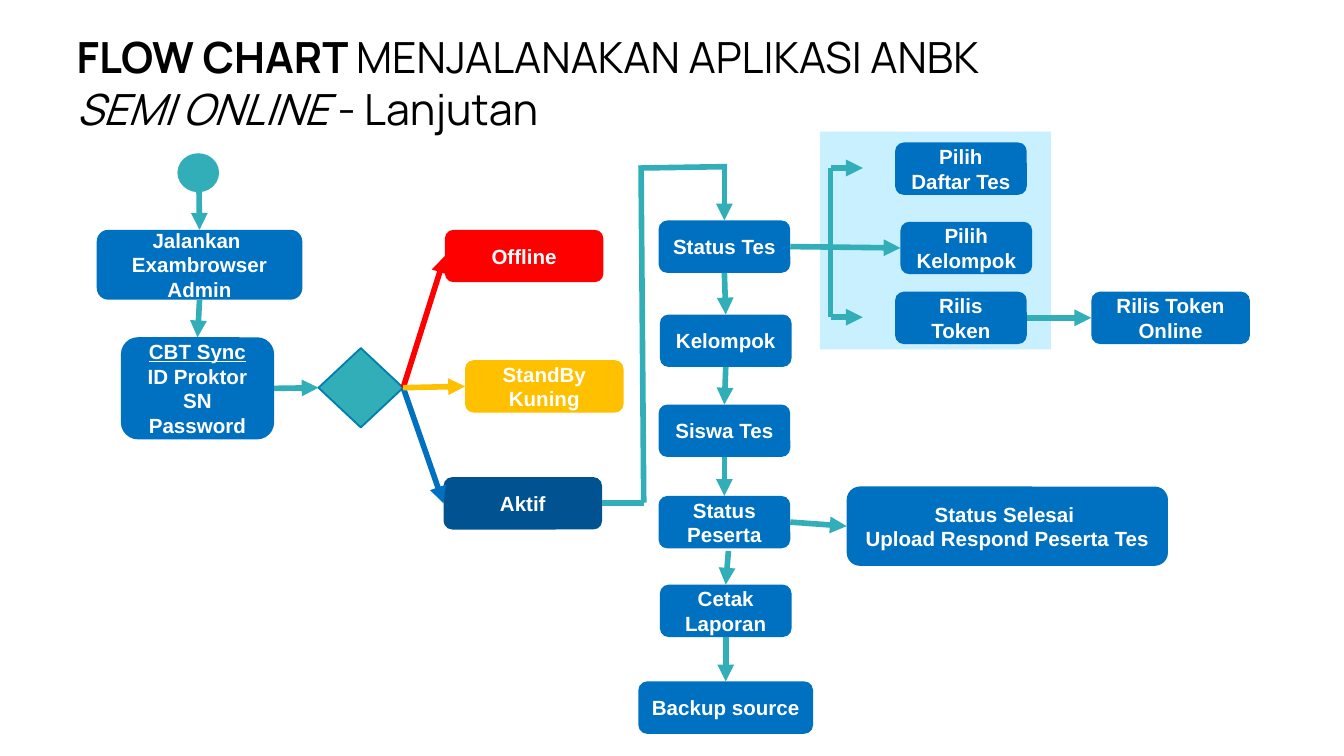
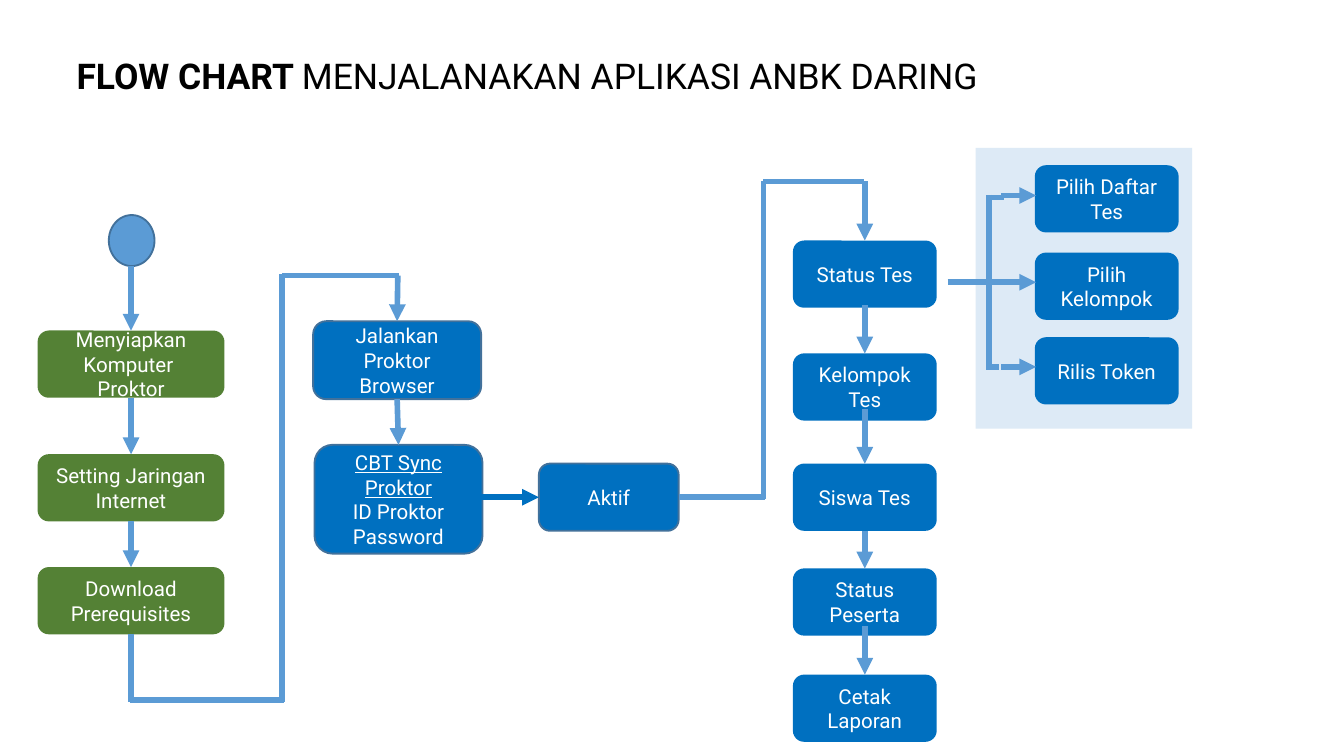
from dataclasses import dataclass

from lxml.etree import SubElement
from pptx import Presentation
from pptx.dml.color import RGBColor
from pptx.enum.shapes import MSO_CONNECTOR, MSO_SHAPE
from pptx.enum.text import MSO_ANCHOR, MSO_AUTO_SIZE, PP_ALIGN
from pptx.oxml.ns import qn
from pptx.util import Inches, Pt


@dataclass(frozen=True)
class Theme:
    black: str = "000000"
    white: str = "FFFFFF"
    blue: str = "0070C0"
    navy: str = "005390"
    red: str = "FF0000"
    amber: str = "FFC000"
    green: str = "548135"
    teal: str = "32AEB8"
    sky: str = "5B9BD5"
    teal_panel: str = "C9F0FE"
    sky_panel: str = "DDEAF6"
    diamond_outline: str = "0080AF"
    sky_outline: str = "42719B"
    semi_online_title: int = 23
    daring_title: int = 19
    label: int = 11
    arrow: int = 3
    outline: int = 1


theme = Theme()
presentation = Presentation()
presentation.slide_width = Inches(10)
presentation.slide_height = presentation.slide_width * 9 // 16

# The slide is a grid of 100 columns by 56.25 rows; all places are in grid units.
COLUMN = presentation.slide_width / 100
ROW = presentation.slide_height / 56.25
TOP, LEFT, BOTTOM, RIGHT = range(4)
TITLE_FRAME = {"word_wrap": True, "auto_size": MSO_AUTO_SIZE.SHAPE_TO_FIT_TEXT,
               "margin_left": 0, "margin_right": 0, "margin_top": 0, "margin_bottom": 0}
LABEL_FRAME = {"word_wrap": True, "vertical_anchor": MSO_ANCHOR.MIDDLE,
               "margin_left": Inches(0.07), "margin_right": Inches(0.07),
               "margin_top": Inches(0.04), "margin_bottom": Inches(0.04)}


def add_node(slide, place, fill, text="", font=None, outline=None,
             kind=MSO_SHAPE.ROUNDED_RECTANGLE):
    """Draw a shape; in text, \\n parts paragraphs and \\v parts lines."""
    left, top, width, height = place
    shape = slide.shapes.add_shape(kind, round(left * COLUMN), round(top * ROW),
                                   round(width * COLUMN), round(height * ROW))
    shape.shadow.inherit = False
    shape.fill.solid()
    shape.fill.fore_color.rgb = RGBColor.from_string(fill)
    if outline:
        shape.line.color.rgb = RGBColor.from_string(outline)
        shape.line.width = Pt(theme.outline)
    else:
        shape.line.fill.background()
    if not text:
        return shape
    frame = shape.text_frame
    for name, value in LABEL_FRAME.items():
        setattr(frame, name, value)
    for number, words in enumerate(text.split("\n")):
        paragraph = frame.add_paragraph() if number else frame.paragraphs[0]
        paragraph.alignment = PP_ALIGN.CENTER
        for position, line in enumerate(words.split("\v")):
            if position:
                paragraph.add_line_break()
            run = paragraph.add_run()
            run.text = line
            run.font.underline = line.startswith("CBT Sync")
            run.font.size = Pt(theme.label)
            run.font.color.rgb = RGBColor.from_string(theme.white)
            for name, value in font.items():
                setattr(run.font, name, value)
    return shape


def add_link(slide, start, end, color, arrow=True):
    """Draw a line; each end is a grid point or a (shape, side) pair."""
    points = [(0, 0) if hasattr(finish[0], "shape_id")
              else (round(finish[0] * COLUMN), round(finish[1] * ROW))
              for finish in (start, end)]
    connector = slide.shapes.add_connector(MSO_CONNECTOR.STRAIGHT, *points[0], *points[1])
    for finish, connect in ((start, connector.begin_connect), (end, connector.end_connect)):
        if hasattr(finish[0], "shape_id"):
            connect(*finish)
    connector.line.color.rgb = RGBColor.from_string(color)
    connector.line.width = Pt(theme.arrow)
    if arrow:
        SubElement(connector.line._get_or_add_ln(), qn("a:tailEnd"), type="triangle")
    SubElement(connector._element.spPr, qn("a:effectLst"))


# Slides and titles
titles = [
    ((5.7, 2.3, 74.1, 7.7), "Manrope", theme.semi_online_title,
     [("FLOW CHART ", {"bold": True}), ("MENJALANAKAN APLIKASI ANBK ", {}),
      ("SEMI ONLINE ", {"italic": True}), ("- Lanjutan", {})]),
    ((5.7, 4, 70.4, 3.2), "Roboto", theme.daring_title,
     [("FLOW CHART ", {"bold": True}), ("MENJALANAKAN APLIKASI ANBK DARING", {})]),
]
for (left, top, width, height), typeface, size, parts in titles:
    slide = presentation.slides.add_slide(presentation.slide_layouts[6])
    title = slide.shapes.add_textbox(round(left * COLUMN), round(top * ROW),
                                     round(width * COLUMN), round(height * ROW))
    for name, value in TITLE_FRAME.items():
        setattr(title.text_frame, name, value)
    paragraph = title.text_frame.paragraphs[0]
    for words, emphasis in parts:
        run = paragraph.add_run()
        run.text = words
        run.font.color.rgb = RGBColor.from_string(theme.black)
        for name, value in {"name": typeface, "size": Pt(size), **emphasis}.items():
            setattr(run.font, name, value)
semi_online, daring = presentation.slides

# Semi online: shapes
font = {"name": "Arial", "bold": True}
add_node(semi_online, (61, 9.8, 17.2, 16.2), theme.teal_panel, kind=MSO_SHAPE.RECTANGLE)
add_node(semi_online, (13.2, 11.4, 3.1, 2.9), theme.teal, kind=MSO_SHAPE.OVAL)
decision = add_node(semi_online, (23.7, 25.9, 6.3, 5.9), theme.teal,
                    outline=theme.diamond_outline, kind=MSO_SHAPE.DIAMOND)
nodes = {}
for text, place, fill in [
    ("Jalankan \nExambrowser Admin", (7.2, 17.1, 15.3, 5.2), theme.blue),
    ("CBT Sync\vID Proktor\vSN\vPassword", (9, 25.1, 11.4, 7.6), theme.blue),
    ("Offline", (33.1, 17.1, 11.8, 3.9), theme.red),
    ("StandBy Kuning", (34.6, 26.8, 11.8, 3.9), theme.amber),
    ("Aktif", (33, 35.5, 11.8, 3.9), theme.navy),
    ("Status Tes", (49, 16.4, 9.8, 3.9), theme.blue),
    ("Kelompok", (49.1, 23.4, 9.8, 3.9), theme.blue),
    ("Siswa Tes", (49, 30.1, 9.8, 3.9), theme.blue),
    ("Status Peserta", (49, 36.9, 9.8, 3.9), theme.blue),
    ("Cetak Laporan", (49.1, 43.5, 9.8, 3.9), theme.blue),
    ("Backup source", (47.5, 50.7, 13, 3.9), theme.blue),
    ("Status Selesai \nUpload Respond Peserta Tes", (63, 36.2, 23.9, 5.9), theme.blue),
    ("Pilih Daftar Tes", (66.6, 10.6, 9.8, 3.9), theme.blue),
    ("Pilih Kelompok", (67, 16.5, 9.8, 3.9), theme.blue),
    ("Rilis Token", (66.6, 21.7, 9.8, 3.9), theme.blue),
    ("Rilis Token Online", (81.2, 21.7, 11.8, 3.9), theme.blue),
]:
    nodes[text.splitlines()[0].strip()] = add_node(semi_online, place, fill, text, font)

# Semi online: arrows between shapes
add_link(semi_online, (14.8, 13.5), (nodes["Jalankan"], TOP), theme.teal)
for upper, lower in [("Jalankan", "CBT Sync"), ("Status Tes", "Kelompok"),
                     ("Kelompok", "Siswa Tes"), ("Siswa Tes", "Status Peserta"),
                     ("Cetak Laporan", "Backup source")]:
    add_link(semi_online, (nodes[upper], BOTTOM), (nodes[lower], TOP), theme.teal)
add_link(semi_online, (54.2, 41), (nodes["Cetak Laporan"], TOP), theme.teal)
add_link(semi_online, (nodes["CBT Sync"], RIGHT), (decision, LEFT), theme.teal)
for outcome, color in [("Offline", theme.red), ("Aktif", theme.blue),
                       ("StandBy Kuning", theme.amber)]:
    add_link(semi_online, (decision, RIGHT), (nodes[outcome], LEFT), color)
for before, after in [("Status Peserta", "Status Selesai"), ("Status Tes", "Pilih Kelompok"),
                      ("Rilis Token", "Rilis Token Online")]:
    add_link(semi_online, (nodes[before], RIGHT), (nodes[after], LEFT), theme.teal)

# Semi online: path from Aktif up to Status Tes, and the branch bracket
add_link(semi_online, (nodes["Aktif"], RIGHT), (47.9, 37.45), theme.teal, arrow=False)
for start, end in [((47.9, 37.4), (47.7, 12.3)), ((47.7, 12.5), (54.1, 12.4)),
                   ((61.8, 12.5), (61.8, 23.6))]:
    add_link(semi_online, start, end, theme.teal, arrow=False)
add_link(semi_online, (53.9, 12.5), (nodes["Status Tes"], TOP), theme.teal)
for row in (12.5, 23.6):
    add_link(semi_online, (61.8, row), (64.2, row), theme.teal)

# Daring: shapes
font = {"name": "Roboto"}
add_node(daring, (8.1, 16, 3.4, 3.8), theme.sky, outline=theme.sky_outline, kind=MSO_SHAPE.OVAL)
add_node(daring, (72.6, 11, 16.1, 20.9), theme.sky_panel, kind=MSO_SHAPE.RECTANGLE)
stacks = []
for left, width, fill, steps in [
    (2.8, 13.9, theme.green, [("Menyiapkan Komputer \nProktor", 24.6),
                              ("Setting Jaringan Internet", 33.8),
                              ("Download Prerequisites", 42.2)]),
    (59, 10.7, theme.blue, [("Status Tes", 17.9), ("Kelompok Tes", 26.3), ("Siswa Tes", 34.5),
                            ("Status Peserta", 42.3), ("Cetak Laporan", 50.2)]),
    (77, 10.7, theme.blue, [("Pilih Daftar Tes", 12.3), ("Pilih Kelompok", 18.8),
                            ("Rilis Token", 25.1)]),
]:
    stacks.append([add_node(daring, (left, top, width, 5), fill, text, font)
                   for text, top in steps])
preparation, status, choices = stacks
browser, sync, active = [
    add_node(daring, place, theme.blue, text, font, theme.sky_outline) for text, place in [
        ("Jalankan Proktor Browser", (23.3, 23.9, 12.5, 5.8)),
        ("CBT Sync Proktor\vID Proktor\vPassword", (23.4, 33.1, 12.5, 8.1)),
        ("Aktif", (40.1, 34.5, 10.4, 5)),
    ]]

# Daring: arrows between shapes
add_link(daring, (9.75, 19.8), (preparation[0], TOP), theme.sky)
for upper, lower in [*zip(preparation, preparation[1:]), (browser, sync), (status[2], status[3])]:
    add_link(daring, (upper, BOTTOM), (lower, TOP), theme.sky)
for row, step in [(13.5, 0), (22.7, 1), (30.4, 2), (46.6, 4)]:
    add_link(daring, (64.35, row), (status[step], TOP), theme.sky)
add_link(daring, (35.8, 37), (active, LEFT), theme.blue)
for column, row in [(74.5, 14.55), (70.5, 21), (74.5, 27.3)]:
    add_link(daring, (column, row), (77.1, row), theme.sky)
add_link(daring, (29.6, 20.5), (browser, TOP), theme.sky)

# Daring: path to the browser, path to Status Tes, and the branch bracket
add_link(daring, (preparation[-1], BOTTOM), (9.75, 52.2), theme.sky, arrow=False)
add_link(daring, (active, RIGHT), (56.9, 37), theme.sky, arrow=False)
for start, end in [
    ((9.7, 52.1), (21.1, 52.1)), ((21, 52.2), (21, 20.4)), ((21, 20.5), (29.7, 20.5)),
    ((56.8, 37.1), (56.8, 13.5)), ((56.8, 13.5), (64.3, 13.5)),
    ((73.6, 14.5), (73.6, 27.3)), ((73.8, 14.7), (74.7, 14.7)), ((73.4, 27.3), (74.3, 27.3)),
]:
    add_link(daring, start, end, theme.sky, arrow=False)

presentation.save("out.pptx")
